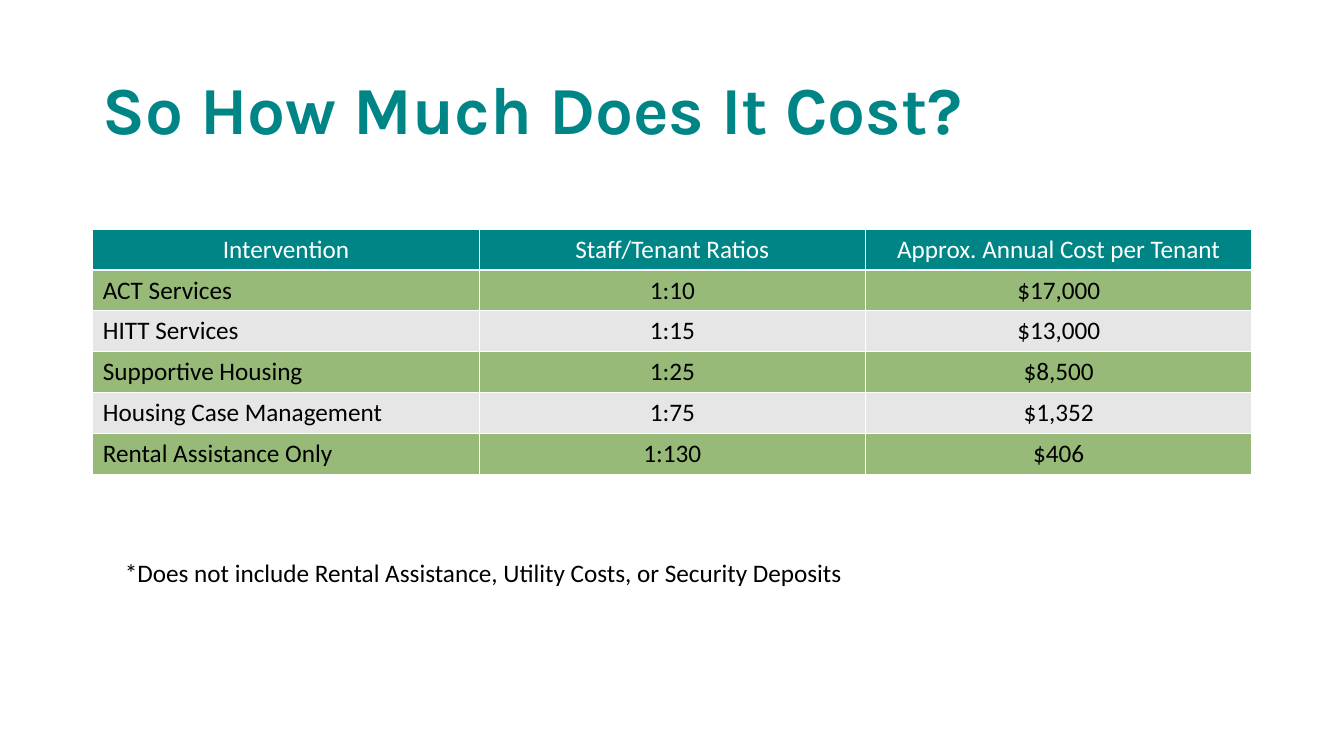
from dataclasses import dataclass

from lxml import etree
from pptx import Presentation
from pptx.dml.color import RGBColor
from pptx.enum.text import MSO_ANCHOR, PP_ALIGN
from pptx.oxml.ns import qn
from pptx.util import Inches, Pt

LEFT, CENTER = PP_ALIGN.LEFT, PP_ALIGN.CENTER
TOP, MIDDLE = MSO_ANCHOR.TOP, MSO_ANCHOR.MIDDLE
WIDTH, HEIGHT = Inches(13.333), Inches(7.5)


@dataclass(frozen=True)
class Theme:
    teal: str = "008586"
    green: str = "98BA79"
    gray: str = "E7E6E6"
    white: str = "FFFFFF"
    black: str = "000000"
    title_font: str = "Karla"
    body_font: str = "Calibri"
    title_size: int = 48
    body_size: int = 18
    border_width: int = 1


THEME = Theme()
TITLE_FORMAT = {"name": THEME.title_font, "size": Pt(THEME.title_size), "bold": True}
BODY_FORMAT = {"name": THEME.body_font, "size": Pt(THEME.body_size), "bold": False}

# Places as shares of the slide: left, top, width, height
TITLE_BOX = (0.069, 0.053, 0.8625, 0.193)
TABLE_BOX = (0.069, 0.303, 0.8625, 0.325)
NOTE_BOX = (0.0855, 0.731, 0.597, 0.054)

COST_ROWS = [
    ("Intervention", "Staff/Tenant Ratios", "Approx. Annual Cost per Tenant"),
    ("ACT Services", "1:10", "$17,000"),
    ("HITT Services", "1:15", "$13,000"),
    ("Supportive Housing", "1:25", "$8,500"),
    ("Housing Case Management", "1:75", "$1,352"),
    ("Rental Assistance Only", "1:130", "$406"),
]


def place(box):
    """Turn shares of the slide into lengths."""
    return [int(share * side) for share, side in zip(box, (WIDTH, HEIGHT) * 2)]


def write(text_frame, text, font_format, color, align=LEFT, line_spacing=None):
    paragraph = text_frame.paragraphs[0]
    paragraph.alignment = align
    paragraph.line_spacing = line_spacing
    run = paragraph.add_run()
    run.text = text
    for name, value in font_format.items():
        setattr(run.font, name, value)
    run.font.color.rgb = RGBColor.from_string(color)


def add_text(slide, box, text, font_format, color, anchor=TOP, line_spacing=None):
    text_frame = slide.shapes.add_textbox(*place(box)).text_frame
    text_frame.word_wrap = True
    text_frame.vertical_anchor = anchor
    write(text_frame, text, font_format, color, line_spacing=line_spacing)


def add_borders(cell, color, width):
    properties = cell._tc.get_or_add_tcPr()
    for index, side in enumerate(("lnL", "lnR", "lnT", "lnB")):
        line = etree.Element(qn(f"a:{side}"), w=str(Pt(width)))
        fill = etree.SubElement(line, qn("a:solidFill"))
        etree.SubElement(fill, qn("a:srgbClr"), val=color)
        properties.insert(index, line)


def add_cost_table(slide, box, rows):
    left, top, width, height = place(box)
    table = slide.shapes.add_table(
        len(rows), len(rows[0]), left, top, width, height).table
    for row_index, row in enumerate(rows):
        is_header = row_index == 0
        band = THEME.green if row_index % 2 else THEME.gray
        for column_index, text in enumerate(row):
            cell = table.cell(row_index, column_index)
            cell.fill.solid()
            cell.fill.fore_color.rgb = RGBColor.from_string(
                THEME.teal if is_header else band)
            add_borders(cell, THEME.white, THEME.border_width)
            write(cell.text_frame, text, BODY_FORMAT,
                  THEME.white if is_header else THEME.black,
                  CENTER if is_header or column_index else LEFT)


def main():
    presentation = Presentation()
    presentation.slide_width, presentation.slide_height = WIDTH, HEIGHT
    slide = presentation.slides.add_slide(presentation.slide_layouts[6])

    # Title
    add_text(slide, TITLE_BOX, "So How Much Does It Cost?", TITLE_FORMAT,
             THEME.teal, MIDDLE, line_spacing=0.9)
    # Costs by intervention
    add_cost_table(slide, TABLE_BOX, COST_ROWS)
    # Footnote
    add_text(slide, NOTE_BOX,
             "*Does not include Rental Assistance, Utility Costs, or Security Deposits",
             BODY_FORMAT, THEME.black)

    presentation.save("out.pptx")


if __name__ == "__main__":
    main()
